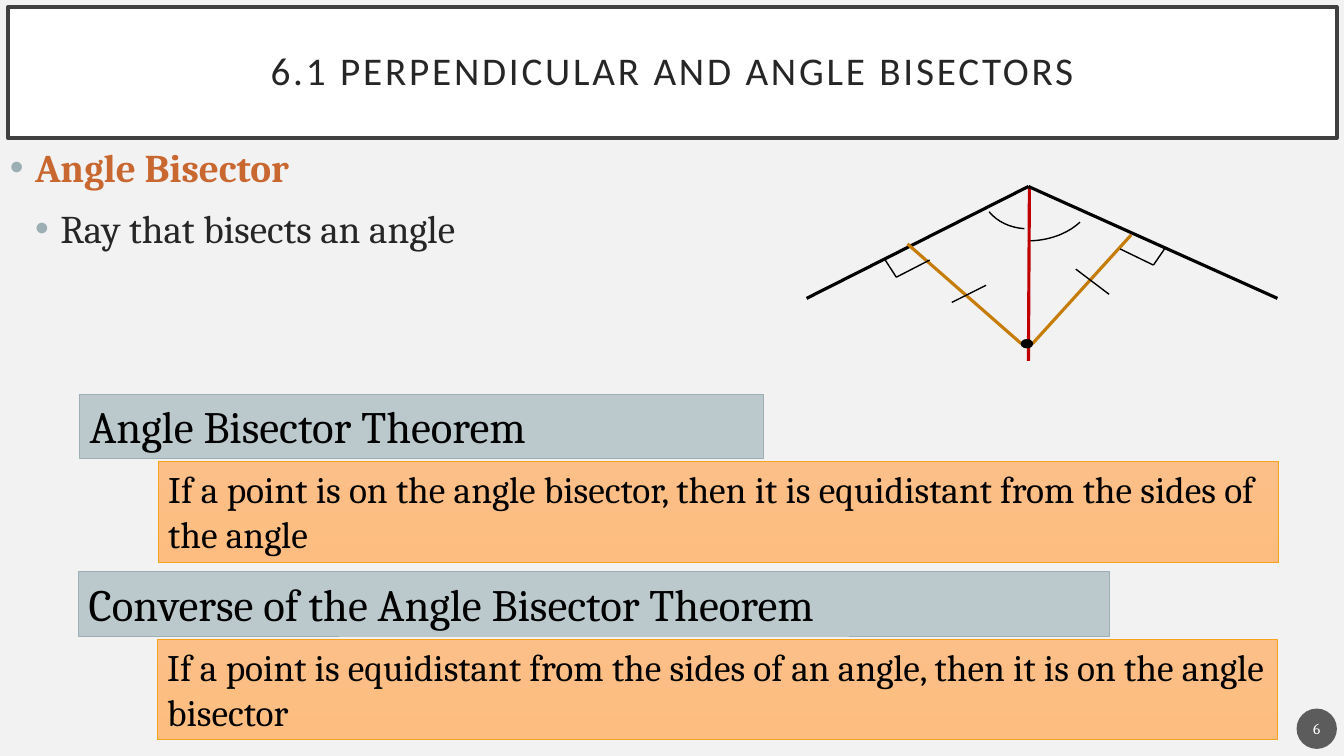
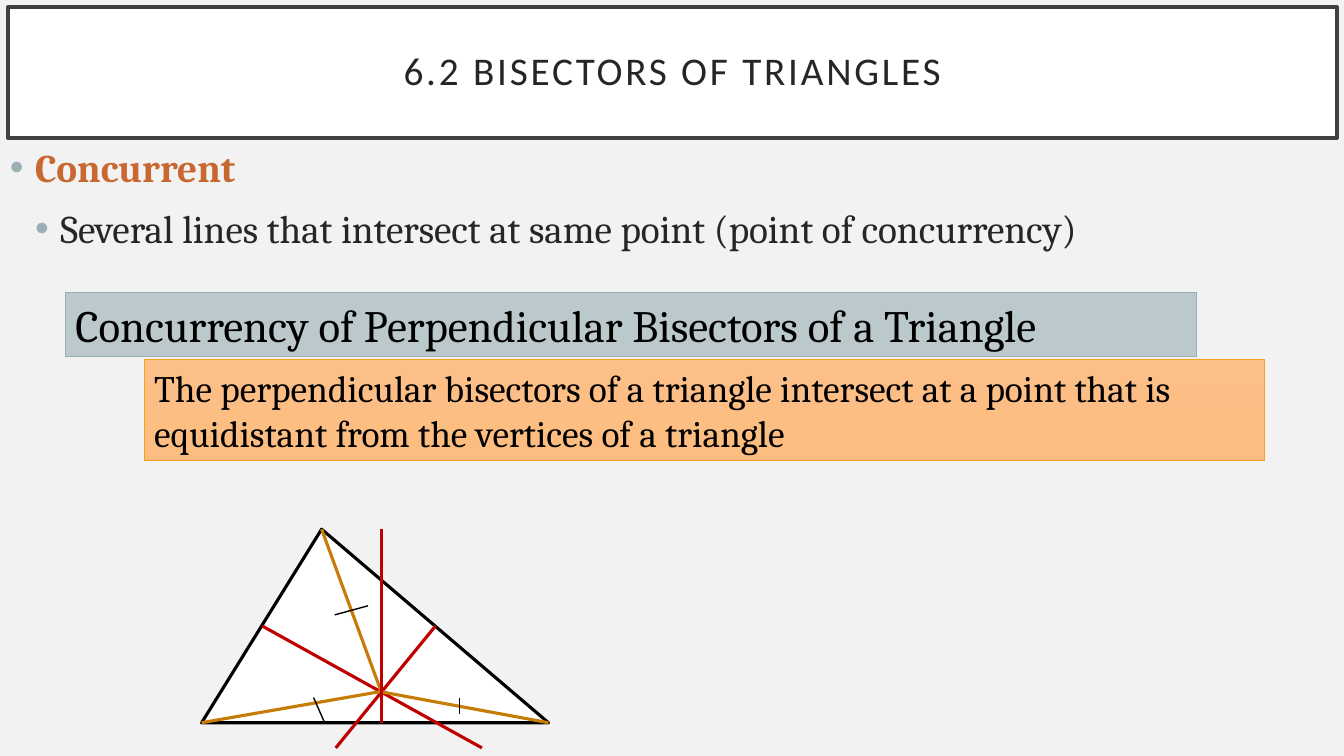
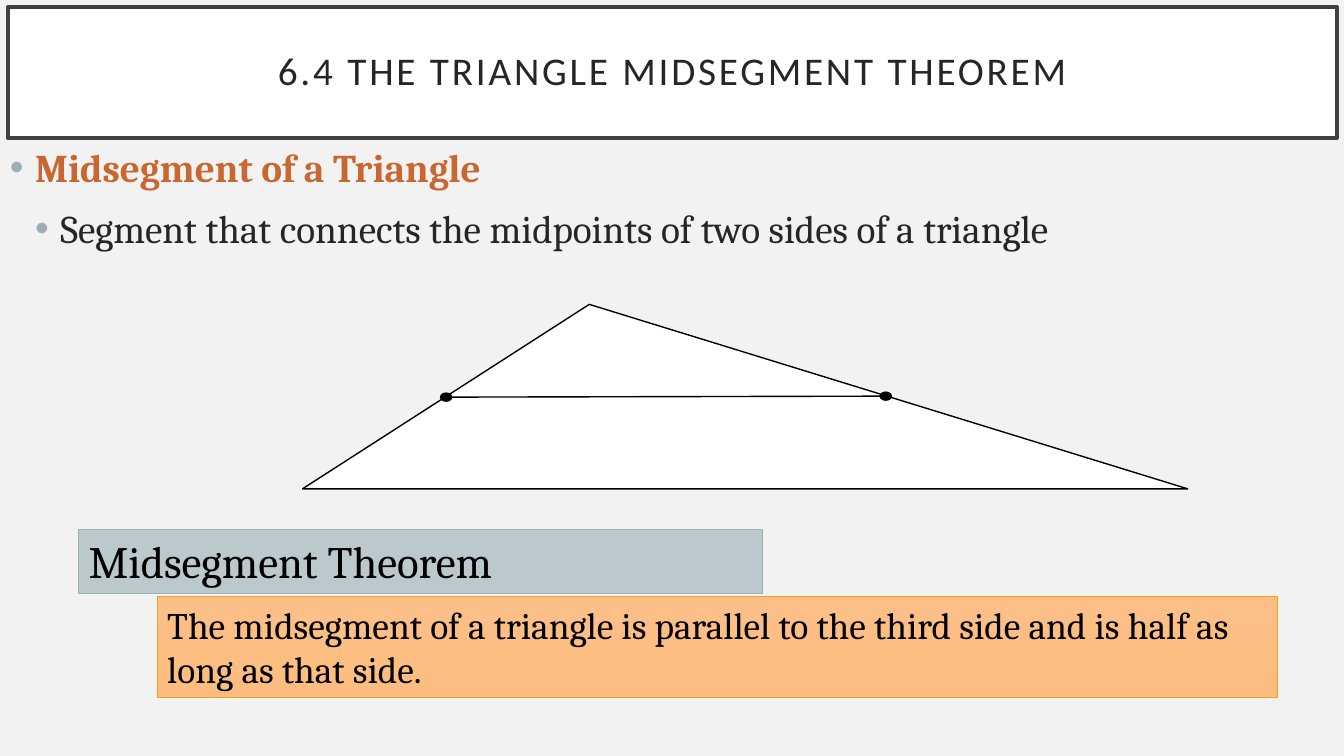
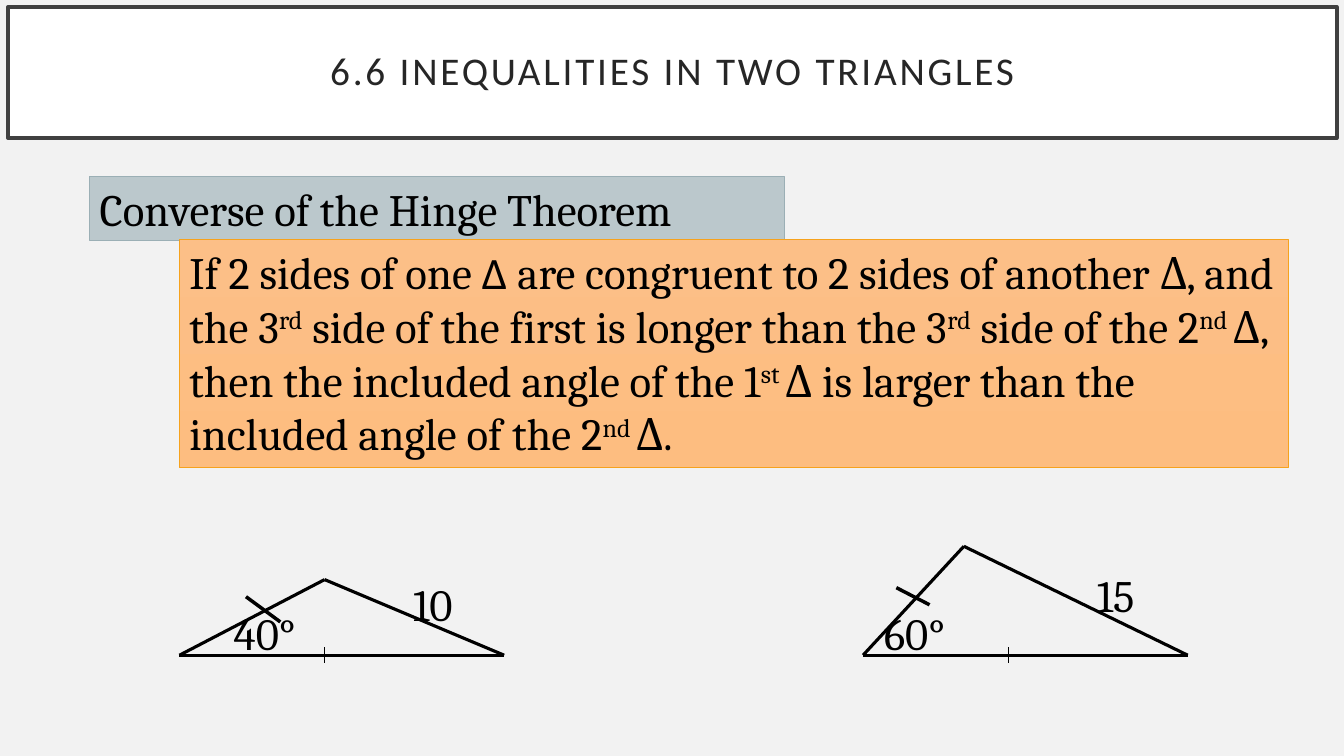
"""Build four geometry slides on bisectors, midsegments and triangle inequalities."""
from lxml import etree
from pptx import Presentation
from pptx.dml.color import RGBColor
from pptx.enum import shapes, text
from pptx.oxml import ns
from pptx.util import Inches, Pt

COLOURS = {
    "ground": "F2F2F2", "white": "FFFFFF", "frame": "404040", "ink": "262626",
    "black": "000000", "term": "C96731", "bullet": "9BAFB5",
    "red": "C00000", "amber": "C67D08", "badge": "1D1D1D",
}
NAME_BOX = {"top": "BBC8CC", "bottom": "B8C6CB", "edge": "9BAFB5"}
STATEMENT_BOX = {"top": "FCBF87", "bottom": "FDBD80", "edge": "F6A21D"}
STROKES = {
    "side": ("black", 2.25), "thin": ("black", 1), "mark": ("black", 2.5),
    "bisector": ("red", 2.25), "distance": ("amber", 2.25),
}
BODY, DISPLAY = "Cambria", "Calibri"
RAISED = {"raised": True}

SLIDES = [
    {
        "title": "6.1 PERPENDICULAR AND ANGLE BISECTORS",
        "definition": ("Angle Bisector", "Ray that bisects an angle"),
        "theorems": [
            {"name": "Angle Bisector Theorem", "at": (0.79, 3.91), "width": 6.78,
             "statement": "If a point is on the angle bisector, then it is "
                          "equidistant from the sides of the angle"},
            {"name": "Converse of the Angle Bisector Theorem",
             "at": (0.78, 5.67), "width": 10.22,
             "statement": "If a point is equidistant from the sides of an angle, "
                          "then it is on the angle bisector"},
        ],
        "arcs": [(9.53, 1.39, 1.33, 1, (18.758, 54)),
                 (9.73, 1.5, 0.93, 0.77, (57.092, 90.359))],
        "strokes": [
            ("bisector", [(10.21, 1.85), (10.2, 3.58)]),
            ("side", [(8, 2.96), (10.2, 1.85), (12.67, 2.96)]),
            ("distance", [(10.24, 3.41), (11.22, 2.33)]),
            ("distance", [(10.13, 3.41), (9, 2.42)]),
            ("thin", [(9.22, 2.58), (8.89, 2.75), (8.78, 2.58)]),
            ("thin", [(11.11, 2.47), (11.44, 2.63), (11.55, 2.47)]),
            ("thin", [(9.78, 2.83), (9.44, 3)]),
            ("thin", [(10.67, 2.67), (11, 2.92)]),
        ],
        "dots": [(10.13, 3.37)],
        "number": "6",
    },
    {
        "title": "6.2 BISECTORS OF TRIANGLES",
        "definition": ("Concurrent", "Several lines that intersect at same point "
                                     "(point of concurrency)"),
        "theorems": [
            {"name": "Concurrency of Perpendicular Bisectors of a Triangle",
             "at": (0.65, 2.9), "width": 11.22,
             "statement": "The perpendicular bisectors of a triangle intersect at a "
                          "point that is equidistant from the vertices of a triangle"},
        ],
        "triangle": (2, 5.25, 3.44, 1.92, 0.346, "side"),
        "strokes": [
            ("bisector", [(2.6, 6.21), (4.78, 7.42)]),
            ("bisector", [(4.32, 6.21), (3.33, 7.42)]),
            ("distance", [(3.78, 6.86), (3.19, 5.25)]),
            ("distance", [(3.78, 6.86), (2, 7.17)]),
            ("distance", [(3.76, 6.86), (5.44, 7.17)]),
            ("thin", [(3.32, 6.1), (3.65, 6.01)]),
            ("thin", [(4.56, 6.92), (4.56, 7.08)]),
            ("thin", [(3.11, 6.92), (3.22, 7.17)]),
            ("bisector", [(3.78, 5.25), (3.78, 7.17)]),
        ],
    },
    {
        "title": "6.4 THE TRIANGLE MIDSEGMENT THEOREM",
        "definition": ("Midsegment of a Triangle", "Segment that connects the "
                       "midpoints of two sides of a triangle"),
        "theorems": [
            {"name": "Midsegment Theorem", "at": (0.78, 5.25), "width": 6.78,
             "statement": "The midsegment of a triangle is parallel to the third "
                          "side and is half as long as that side."},
        ],
        "triangle": (3, 3.02, 8.78, 1.83, 0.324, "thin"),
        "strokes": [("thin", [(4.42, 3.94), (8.81, 3.93)])],
        "dots": [(4.37, 3.9), (8.73, 3.89)],
    },
    {
        "title": "6.6 INEQUALITIES IN TWO TRIANGLES",
        "theorems": [
            {"name": "Converse of the Hinge Theorem", "at": (0.89, 1.75),
             "width": 6.89, "box": (1.78, 2.38, 11, 2.26), "size": 32,
             "statement": [
                 ("If 2 sides of one ", {}), ("Δ ", {"font": DISPLAY}),
                 ("are congruent to 2 sides of another Δ, and the 3", {}),
                 ("rd", RAISED), (" side of the first is longer than the 3", {}),
                 ("rd", RAISED), (" side of the 2", {}), ("nd ", RAISED),
                 ("Δ, then the included angle of the 1", {}), ("st ", RAISED),
                 ("Δ is larger than the included angle of the 2", {}),
                 ("nd ", RAISED), ("Δ.", {})]},
        ],
        "strokes": [
            ("side", [(1.78, 6.5), (5, 6.5), (3.22, 5.75), (1.78, 6.5)]),
            ("thin", [(3.22, 6.42), (3.22, 6.58)]),
            ("mark", [(2.44, 5.92), (2.78, 6.17)]),
            ("side", [(8.56, 6.5), (11.78, 6.5), (9.56, 5.42), (8.56, 6.5)]),
            ("thin", [(10, 6.42), (10, 6.58)]),
            ("mark", [(8.89, 5.83), (9.22, 6)]),
        ],
        "labels": [("10", 4, 5.67), ("40°", 2.22, 5.96),
                   ("60°", 8.67, 5.96), ("15", 10.78, 5.58)],
    },
]


def rgb(name):
    return RGBColor.from_string(COLOURS.get(name, name))


def write(paragraph, content, size=32, font=BODY, colour="black", bold=False,
          spacing=None, raised=False):
    """Add a string, or (string, overrides) runs, to a paragraph."""
    base = {"size": size, "font": font, "colour": colour, "bold": bold,
            "spacing": spacing, "raised": raised}
    if not isinstance(content, str):
        for piece, changes in content:
            write(paragraph, piece, **{**base, **changes})
        return
    run = paragraph.add_run()
    run.text = content
    run.font.size, run.font.name, run.font.bold = Pt(size), font, bold
    run.font.color.rgb = rgb(colour)
    if spacing:
        run.font._element.set("spc", str(spacing * 100))
    if raised:
        run.font._element.set("baseline", "30000")


def set_frame(frame, anchor=text.MSO_ANCHOR.TOP, across=0.1, down=0.05,
              align=text.PP_ALIGN.LEFT):
    """Set wrapping, anchor and insets; return the first paragraph."""
    frame.word_wrap = True
    frame.vertical_anchor = anchor
    frame.margin_left = frame.margin_right = Inches(across)
    frame.margin_top = frame.margin_bottom = Inches(down)
    frame.paragraphs[0].alignment = align
    return frame.paragraphs[0]


def add_outline(slide, preset, at, fill=None, edge=None, weight=1):
    """Add a preset shape with a plain fill and line."""
    shape = slide.shapes.add_shape(preset, *map(Inches, at))
    shape.shadow.inherit = False
    if fill:
        shape.fill.solid()
        shape.fill.fore_color.rgb = rgb(fill)
    else:
        shape.fill.background()
    if edge:
        shape.line.color.rgb = rgb(edge)
        shape.line.width = Pt(weight)
    else:
        shape.line.fill.background()
    return shape


def add_title(slide, title):
    band = add_outline(slide, shapes.MSO_SHAPE.RECTANGLE, (0.08, 0.07, 13.18, 1.3),
                       "white", "frame", 2.5)
    heading = set_frame(band.text_frame, text.MSO_ANCHOR.MIDDLE, 0.2, 0.2,
                        text.PP_ALIGN.CENTER)
    heading.line_spacing = 0.9
    write(heading, title, size=28, font=DISPLAY, colour="ink", spacing=2)


def add_definition(slide, term, meaning):
    """Add the bulleted term and its meaning one level below."""
    box = slide.shapes.add_textbox(*map(Inches, (0, 1.37, 13.33, 5.77)))
    first = set_frame(box.text_frame)
    lines = [(first, term, "term", True),
             (box.text_frame.add_paragraph(), meaning, "ink", False)]
    for level, (paragraph, content, colour, bold) in enumerate(lines, 1):
        paragraph.space_before = Pt(10)
        write(paragraph, content, size=28, colour=colour, bold=bold)
        props = paragraph._p.get_or_add_pPr()
        props.set("marL", str(Inches(0.25 * level)))
        props.set("indent", str(Inches(-0.25)))
        tint = etree.SubElement(props, ns.qn("a:buClr"))
        etree.SubElement(tint, ns.qn("a:srgbClr"), val=COLOURS["bullet"])
        etree.SubElement(props, ns.qn("a:buFont"), typeface="Arial")
        etree.SubElement(props, ns.qn("a:buChar"), char="•")


def add_panel(slide, at, look, content, size):
    """Add a gradient box holding one paragraph."""
    panel = add_outline(slide, shapes.MSO_SHAPE.RECTANGLE, at, None, look["edge"], 0.5)
    panel.fill.gradient()
    panel.fill.gradient_angle = 270
    for stop, part in zip(panel.fill.gradient_stops, ("top", "bottom")):
        stop.color.rgb = rgb(look[part])
    write(set_frame(panel.text_frame), content, size=size)


def add_theorem(slide, theorem):
    left, top = theorem["at"]
    box = theorem.get("box", (left + 0.78, top + 0.67, 11.11, 1))
    add_panel(slide, (left, top, theorem["width"], 0.64), NAME_BOX, theorem["name"], 32)
    add_panel(slide, box, STATEMENT_BOX, theorem["statement"], theorem.get("size", 26.7))


def add_stroke(slide, style, points):
    """Join successive points with straight lines."""
    colour, weight = STROKES[style]
    for start, end in zip(points, points[1:]):
        line = slide.shapes.add_connector(shapes.MSO_CONNECTOR.STRAIGHT,
                                          *map(Inches, start + end))
        line.line.color.rgb = rgb(colour)
        line.line.width = Pt(weight)
        etree.SubElement(line._element.spPr, ns.qn("a:effectLst"))


def add_figure(slide, content):
    """Draw the diagram, from the filled triangle up to the labels."""
    if "triangle" in content:
        *at, apex, style = content["triangle"]
        triangle = add_outline(slide, shapes.MSO_SHAPE.ISOSCELES_TRIANGLE, at, "white",
                               *STROKES[style])
        triangle.adjustments[0] = apex
    for *at, angles in content.get("arcs", []):
        arc = add_outline(slide, shapes.MSO_SHAPE.ARC, at, None, "black")
        arc.adjustments[0], arc.adjustments[1] = angles
    for style, points in content["strokes"]:
        add_stroke(slide, style, points)
    for left, top in content.get("dots", []):
        add_outline(slide, shapes.MSO_SHAPE.OVAL, (left, top, 0.11, 0.08),
                    "black", "black")
    for label, left, top in content.get("labels", []):
        box = slide.shapes.add_textbox(*map(Inches, (left, top, 1.44, 0.64)))
        write(set_frame(box.text_frame), label)


def add_number(slide, number):
    badge = add_outline(slide, shapes.MSO_SHAPE.OVAL, (12.86, 7.03, 0.4, 0.4), "badge")
    tint = badge._element.spPr.find(ns.qn("a:solidFill"))[0]
    etree.SubElement(tint, ns.qn("a:alpha"), val="70000")
    write(set_frame(badge.text_frame, text.MSO_ANCHOR.MIDDLE, 0.02, 0.05,
                    text.PP_ALIGN.CENTER), number, size=11, colour="white")


def main():
    deck = Presentation()
    deck.slide_width, deck.slide_height = Inches(13.33), Inches(7.5)
    for content in SLIDES:
        slide = deck.slides.add_slide(deck.slide_layouts[6])
        slide.background.fill.solid()
        slide.background.fill.fore_color.rgb = rgb("ground")
        add_title(slide, content["title"])
        if "definition" in content:
            add_definition(slide, *content["definition"])
        for theorem in content["theorems"]:
            add_theorem(slide, theorem)
        add_figure(slide, content)
        if "number" in content:
            add_number(slide, content["number"])
    deck.save("out.pptx")


if __name__ == "__main__":
    main()
